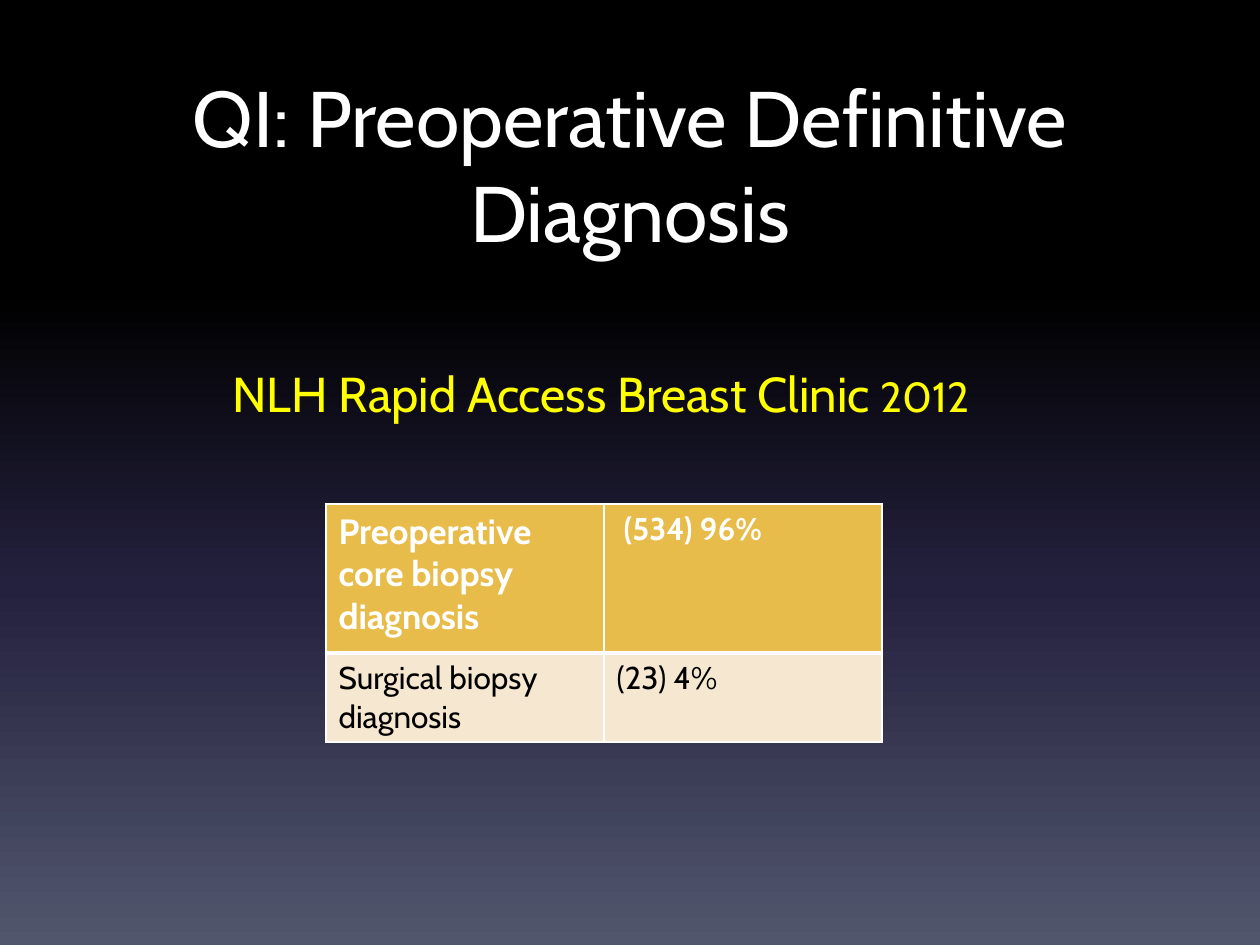
import copy

import pptx
import pptx.dml.color
import pptx.enum.text
import pptx.oxml
import pptx.oxml.ns
import pptx.util

PX = 914400 // 126
FONT = "Cabin"
WHITE, BLACK, YELLOW = "FFFFFF", "000000", "FFFF00"
GOLD, CREAM = "E8BC4A", "F6E7D0"
BACKGROUND = [(0, BLACK), (0.31, BLACK), (0.62, "24213E"), (1, "51566D")]
qn = pptx.oxml.ns.qn


def px(n):
    return pptx.util.Emu(n * PX)


def rgb(color):
    return pptx.dml.color.RGBColor.from_string(color)


def add_run(p, text, size, color=WHITE, bold=False):
    r = p.add_run()
    r.text = text
    r.font.name = FONT
    r.font.size = pptx.util.Pt(size)
    r.font.bold = bold
    r.font.color.rgb = rgb(color)


def add_textbox(s, box):
    """Add a wrapping text box and return its first paragraph."""
    tf = s.shapes.add_textbox(*map(px, box)).text_frame
    tf.word_wrap = True
    return tf.paragraphs[0]


def set_background(s, stops):
    """Fill the background from top to bottom through the given stops."""
    fill = s.background.fill
    fill.gradient()
    fill.gradient_angle = 270
    gs_list = s.element.find(".//" + qn("a:gsLst"))
    while len(gs_list) < len(stops):
        gs_list.append(copy.deepcopy(gs_list[0]))
    for stop, (position, color) in zip(fill.gradient_stops, stops):
        stop.position = position
        stop.color.rgb = rgb(color)


def set_borders(cell, **widths):
    """Draw white borders; keys are L, R, T and B, widths are points."""
    tc_pr = cell._tc.get_or_add_tcPr()
    for side, width in widths.items():
        tc_pr.append(pptx.oxml.parse_xml(
            f'<a:ln{side} {pptx.oxml.ns.nsdecls("a")} w="{pptx.util.Pt(width)}">'
            f'<a:solidFill><a:srgbClr val="{WHITE}"/></a:solidFill></a:ln{side}>'))


def add_title(s, box):
    p = add_textbox(s, box)
    p.alignment = pptx.enum.text.PP_ALIGN.CENTER
    add_run(p, "QI: Preoperative Definitive Diagnosis", 45)


def add_subtitle(s, box):
    p = add_textbox(s, box)
    add_run(p, "NLH Rapid Access Breast Clinic ", 28, YELLOW)
    add_run(p, "2012", 24, YELLOW)


def add_diagnosis_table(s, box):
    rows = [
        (149, GOLD, dict(color=WHITE, bold=True), dict(T=1, B=3),
         [("Preoperative core biopsy diagnosis", 20), (" (534) 96%", 18)]),
        (89, CREAM, dict(color=BLACK), dict(T=3, B=1),
         [("Surgical biopsy diagnosis", 18), ("(23) 4%", 18)]),
    ]
    table = s.shapes.add_table(len(rows), 2, *map(px, box)).table
    for i, (height, fill, style, edges, texts) in enumerate(rows):
        table.rows[i].height = px(height)
        for j, (text, size) in enumerate(texts):
            cell = table.cell(i, j)
            set_borders(cell, L=1, R=1, **edges)
            cell.fill.solid()
            cell.fill.fore_color.rgb = rgb(fill)
            add_run(cell.text_frame.paragraphs[0], text, size, **style)


def main():
    prs = pptx.Presentation()
    prs.slide_width, prs.slide_height = px(1260), px(945)
    s = prs.slides.add_slide(prs.slide_layouts[6])
    set_background(s, BACKGROUND)
    add_title(s, (63, 63, 1134, 158))
    add_diagnosis_table(s, (326, 504, 556, 238))
    add_subtitle(s, (220, 357, 840, 72))
    prs.save("out.pptx")


if __name__ == "__main__":
    main()
